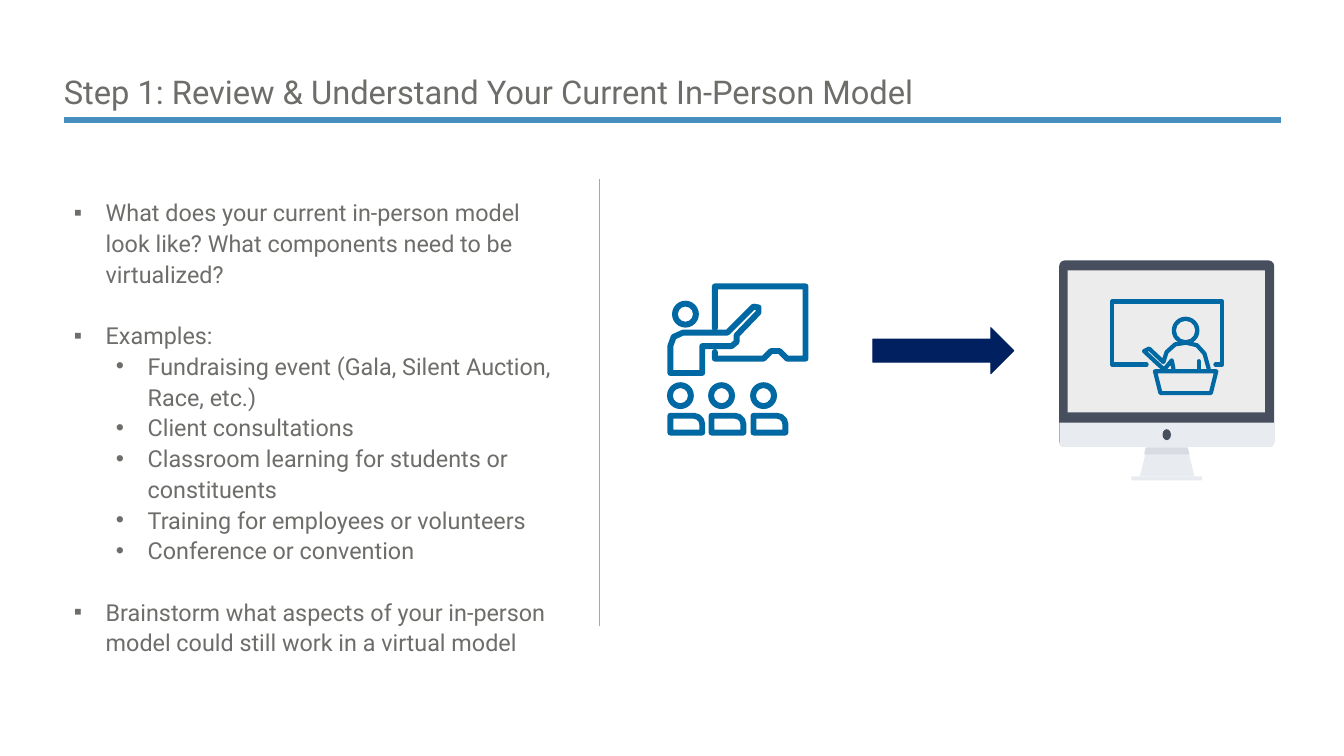
from lxml import etree
from pptx import Presentation
from pptx.dml.color import RGBColor
from pptx.enum.shapes import MSO_CONNECTOR, MSO_SHAPE as Preset
from pptx.enum.text import MSO_ANCHOR, MSO_AUTO_SIZE, PP_ALIGN
from pptx.oxml.ns import qn
from pptx.util import Pt

PX = 9144  # EMU per px, 100 px to the inch
FONT = "Roboto"
TEXT_GRAY = RGBColor(0x6D, 0x6E, 0x6A)
RULE_BLUE = RGBColor(0x47, 0x8F, 0xBF)
DIVIDER_GRAY = RGBColor(0xAC, 0xA6, 0xA2)
ICON_BLUE = RGBColor(0x00, 0x69, 0xA3)
ARROW_NAVY = RGBColor(0x00, 0x20, 0x60)
FRAME_SLATE = RGBColor(0x47, 0x4E, 0x5D)
SCREEN_GRAY = RGBColor(0xEC, 0xEC, 0xEC)
STAND_LIGHT = RGBColor(0xE8, 0xEB, 0xF0)
STAND_SHADE = RGBColor(0xD8, 0xDB, 0xE1)

TITLE = "Step 1: Review & Understand Your Current In-Person Model"
# Level, text, and space before in points
BULLETS = [
    (0, "What does your current in-person model look like? What components need to be virtualized?", 0),
    (0, "Examples:", 26),
    (1, "Fundraising event (Gala, Silent Auction, Race, etc.)", 0),
    (1, "Client consultations", 0),
    (1, "Classroom learning for students or constituents", 0),
    (1, "Training for employees or volunteers", 0),
    (1, "Conference or convention", 0),
    (0, "Brainstorm what aspects of your in-person model could still work in a virtual model", 26),
]

# Icon strokes, in px from the corner of their icon
BOARD = [(57, 54), (57, 4), (165, 4), (165, 90), (143, 90), (134, 81), (124, 81), (115, 90),
         (57, 90), (57, 82)]
TEACHER = [(4, 107), (4, 75), (8, 64), (19, 59), (72, 59), (103, 28), (109, 29), (109, 35),
           (83, 62), (83, 70), (77, 75), (42, 75), (42, 107), (4, 107)]
VIRTUAL_BOARD = [(44, 78), (3, 78), (3, 3), (134, 3), (134, 78), (126, 78)]
SPEAKER = [(80, 62), (75, 44), (66, 34), (53, 31), (40, 33), (30, 42), (26, 54), (9, 38), (3, 41),
           (18, 55), (27, 63), (36, 52), (38, 62)]
SPEAKER_ARM = [(68, 53), (68, 62)]


def add_line(slide, start, end, color, points):
    line = slide.shapes.add_connector(MSO_CONNECTOR.STRAIGHT, *(v * PX for v in start + end))
    line.line.color.rgb = color
    line.line.width = Pt(points)
    etree.SubElement(line._element.spPr, qn("a:effectLst"))


def add_preset(slide, preset, box, color):
    shape = slide.shapes.add_shape(preset, *(v * PX for v in box))
    shape.shadow.inherit = False
    shape.fill.solid()
    shape.fill.fore_color.rgb = color
    shape.line.fill.background()
    return shape


def set_stroke(shape, weight):
    """Leave only a round-ended icon outline, weight px wide."""
    shape.shadow.inherit = False
    shape.fill.background()
    shape.line.color.rgb = ICON_BLUE
    shape.line.width = weight * PX
    outline = shape.line._get_or_add_ln()
    outline.set("cap", "rnd")
    etree.SubElement(outline, qn("a:round"))


def add_stroke(slide, points, left, top, weight):
    first, *others = [(left + x, top + y) for x, y in points]
    builder = slide.shapes.build_freeform(*first, scale=PX)
    builder.add_line_segments(others, close=first == others[-1])
    set_stroke(builder.convert_to_shape(), weight)


def add_head(slide, left, top, size, weight):
    head = add_preset(slide, Preset.DONUT, (left, top, size, size), ICON_BLUE)
    head.adjustments[0] = weight / size


def add_span(para, text, points):
    span = para.add_run()
    span.text = text
    span.font.name = FONT
    span.font.size = Pt(points)
    span.font.color.rgb = TEXT_GRAY


def add_title(slide, left, top, width, height):
    title = slide.shapes.title
    title.left, title.top, title.width, title.height = (v * PX for v in (left, top, width, height))
    frame = title.text_frame
    frame.margin_left = frame.margin_right = frame.margin_top = frame.margin_bottom = 0
    frame.vertical_anchor = MSO_ANCHOR.BOTTOM
    frame.word_wrap = True
    frame.paragraphs[0].alignment = PP_ALIGN.LEFT
    add_span(frame.paragraphs[0], TITLE, 28)
    rule_y = top + height + 11
    add_line(slide, (left, rule_y), (left + width, rule_y), RULE_BLUE, 4.5)


def add_bullets(slide, left, top, width, height):
    frame = slide.shapes.add_textbox(*(v * PX for v in (left, top, width, height))).text_frame
    frame.word_wrap = True
    frame.auto_size = MSO_AUTO_SIZE.SHAPE_TO_FIT_TEXT
    for index, (level, text, before) in enumerate(BULLETS):
        para = frame.add_paragraph() if index else frame.paragraphs[0]
        para.level = level
        para.line_spacing = 1.1
        para.space_before = Pt(before)
        props = para._p.get_or_add_pPr()
        props.set("marL", str((38 + 50 * level) * PX))
        props.set("indent", str(-38 * PX))
        etree.SubElement(props, qn("a:buFont"), typeface="Arial")
        etree.SubElement(props, qn("a:buChar"), char="▪•"[level])
        add_span(para, text, 20)


def add_classroom(slide, left, top):
    weight = 7
    add_head(slide, left + 6, top + 21, 32, weight)
    for points in (BOARD, TEACHER):
        add_stroke(slide, points, left, top, weight)
    # Seated audience
    for seat in range(3):
        seat_left = left + seat * 99 // 2
        add_head(slide, seat_left, top + 118, 32, weight)
        body = add_preset(slide, Preset.ROUND_1_RECTANGLE,
                          (seat_left + 4, top + 158, 38, 20), ICON_BLUE)
        body.adjustments[0] = 0.5
        set_stroke(body, weight)


def add_monitor(slide, left, top):
    def part(preset, x, y, width, height, color):
        return add_preset(slide, preset, (left + x, top + y, width, height), color)

    part(Preset.TRAPEZOID, 96, 207, 65, 50, STAND_LIGHT)
    part(Preset.ROUNDED_RECTANGLE, 0, 0, 256, 222, FRAME_SLATE).adjustments[0] = 0.03
    part(Preset.RECTANGLE, 10, 12, 235, 169, SCREEN_GRAY)
    part(Preset.ROUND_2_SAME_RECTANGLE, 0, 193, 256, 29, STAND_LIGHT).rotation = 180
    part(Preset.OVAL, 123, 201, 10, 13, FRAME_SLATE)
    part(Preset.TRAPEZOID, 101, 223, 54, 8, STAND_SHADE)
    part(Preset.RECTANGLE, 86, 257, 84, 5, STAND_LIGHT)


def add_virtual_presenter(slide, left, top):
    weight = 5
    add_stroke(slide, VIRTUAL_BOARD, left, top, weight)
    speaker_left, speaker_top = left + 38, top + 21
    add_head(slide, speaker_left + 36, speaker_top, 33, weight)
    for points in (SPEAKER, SPEAKER_ARM):
        add_stroke(slide, points, speaker_left, speaker_top, weight)
    lectern = add_preset(slide, Preset.TRAPEZOID,
                         (speaker_left + 16, speaker_top + 65, 73, 26), ICON_BLUE)
    lectern.rotation = 180
    set_stroke(lectern, weight)


def main():
    deck = Presentation()
    deck.slide_width, deck.slide_height = 1600 * PX, 900 * PX
    slide = deck.slides.add_slide(deck.slide_layouts[5])
    add_title(slide, 76, 53, 1449, 79)
    add_bullets(slide, 78, 228, 609, 697)
    # From in-person to virtual
    add_monitor(slide, 1261, 310)
    add_virtual_presenter(slide, 1321, 356)
    add_classroom(slide, 794, 337)
    arrow = add_preset(slide, Preset.RIGHT_ARROW, (1039, 390, 168, 55), ARROW_NAVY)
    arrow.line.color.rgb = ARROW_NAVY
    arrow.line.width = Pt(0.75)
    add_line(slide, (714, 213), (714, 745), DIVIDER_GRAY, 0.75)
    deck.save("out.pptx")


if __name__ == "__main__":
    main()
